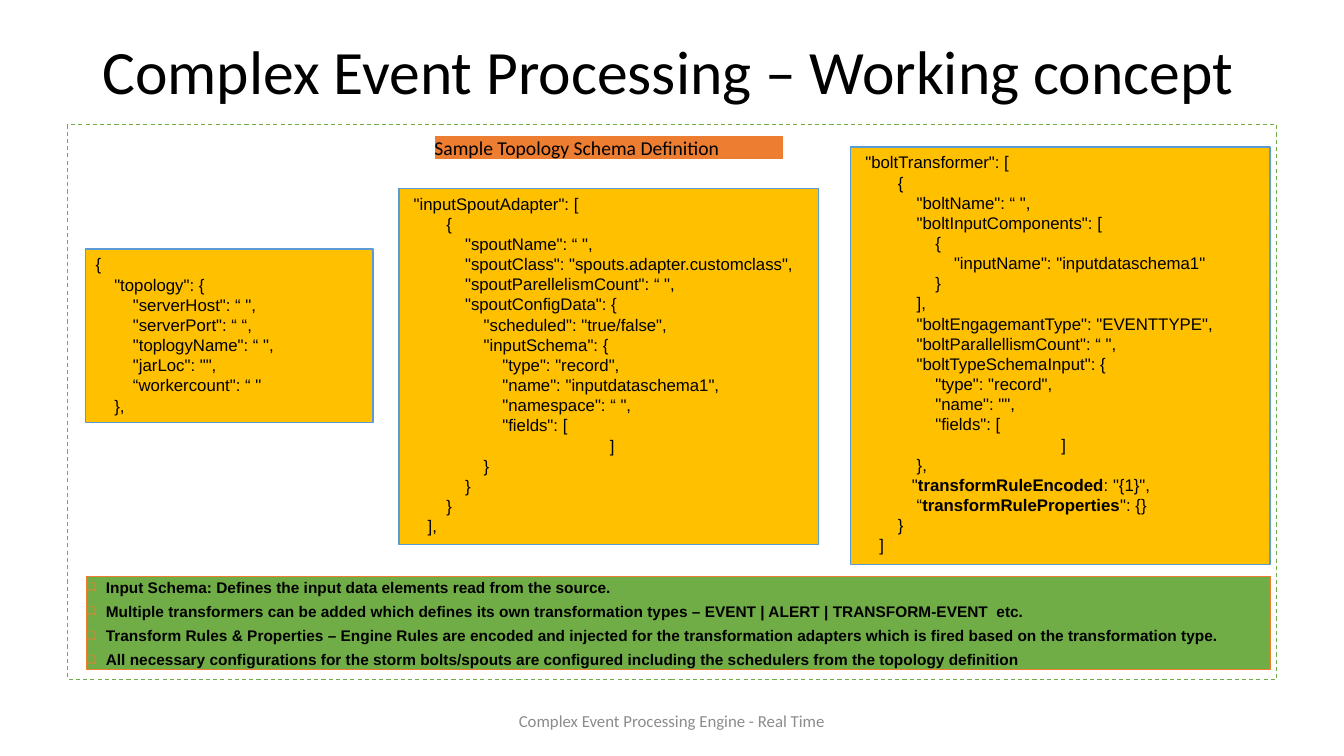
from dataclasses import dataclass

from lxml.etree import SubElement
from pptx import Presentation
from pptx.dml.color import RGBColor
from pptx.enum.dml import MSO_LINE_DASH_STYLE as Dash
from pptx.enum.shapes import MSO_SHAPE as Preset
from pptx.enum.text import MSO_ANCHOR as Anchor, MSO_AUTO_SIZE as AutoSize, PP_ALIGN as Align
from pptx.oxml.ns import qn
from pptx.util import Pt

BLACK, WHITE, GREY = "000000", "FFFFFF", "8C8C8C"
ORANGE, AMBER, BLUE, GREEN = "ED7D31", "FFC000", "5B9BD5", "70AD47"
SPACE_WIDTH = 3.335
BULLET_INDENT = 13.7


@dataclass(frozen=True)
class Box:
    left: float
    top: float
    width: float
    height: float


@dataclass(frozen=True)
class Schema:
    box: Box
    code: str


SCHEMAS = [
    Schema(Box(61.2, 178, 205.2, 124), """{
    "topology": {
        "serverHost": “ ",
        "serverPort": “ “,
        "toplogyName": “ ",
        "jarLoc": "",
        “workercount": “ "
    },"""),
    Schema(Box(285.1, 134.6, 299.5, 254.2), """ "inputSpoutAdapter": [
        {
            "spoutName": “ ",
            "spoutClass": "spouts.adapter.customclass",
            "spoutParellelismCount": “ ",
            "spoutConfigData": {
                "scheduled": "true/false",
                "inputSchema": {
                    "type": "record",
                    "name": "inputdataschema1",
                    "namespace": “ ",
                    "fields": [
                                           ]
                }
            }
        }
    ],"""),
    Schema(Box(607.7, 105.1, 299.5, 298.1), """ "boltTransformer": [
        {
            "boltName": “ ",
            "boltInputComponents": [
                {
                    "inputName": "inputdataschema1"
                }
            ],
            "boltEngagemantType": "EVENTTYPE",
            "boltParallellismCount": “ ",
            "boltTypeSchemaInput": {
                "type": "record",
                "name": "",
                "fields": [
                                           ]
            },
           "**transformRuleEncoded**: "{1}",
            “**transformRuleProperties**": {}
        }
    ]"""),
]

NOTES = [
    "Input Schema: Defines the input data elements read from the source.",
    "Multiple transformers can be added which defines its own transformation types – "
    "EVENT | ALERT | TRANSFORM-EVENT  etc.",
    "Transform Rules & Properties – Engine Rules are encoded and injected for the "
    "transformation adapters which is fired based on the transformation type.",
    "All necessary configurations for the storm bolts/spouts are configured including "
    "the schedulers from the topology definition",
]


def color(value: str) -> RGBColor:
    return RGBColor.from_string(value)


def place(shape, box: Box) -> None:
    shape.left, shape.top = Pt(box.left), Pt(box.top)
    shape.width, shape.height = Pt(box.width), Pt(box.height)


def paint(shape, fill: str | None, line: str, weight: float) -> None:
    if fill:
        shape.fill.solid()
        shape.fill.fore_color.rgb = color(fill)
    else:
        shape.fill.background()
    shape.line.color.rgb = color(line)
    shape.line.width = Pt(weight)


def add_box(slide, box: Box, fill: str | None, line: str, weight: float):
    shape = slide.shapes.add_shape(
        Preset.RECTANGLE, Pt(box.left), Pt(box.top), Pt(box.width), Pt(box.height))
    shape.shadow.inherit = False
    paint(shape, fill, line, weight)
    return shape


def prepare(shape, anchor: Anchor, tight: bool = False):
    frame = shape.text_frame
    frame.word_wrap = True
    frame.auto_size = AutoSize.NONE
    frame.vertical_anchor = anchor
    if tight:
        frame.margin_left = frame.margin_right = frame.margin_bottom = Pt(0)
        frame.margin_top = Pt(2.9)
    return frame


def add_run(paragraph, text: str, size: float, font: str,
            ink: str = BLACK, bold: bool = False) -> None:
    run = paragraph.add_run()
    run.text = text
    run.font.size, run.font.name, run.font.bold = Pt(size), font, bold
    run.font.color.rgb = color(ink)


def paragraphs(frame, count: int) -> list:
    return [frame.paragraphs[0], *(frame.add_paragraph() for _ in range(count - 1))]


def space(paragraph) -> None:
    paragraph.line_spacing = 0.85
    paragraph.space_before, paragraph.space_after = Pt(0), Pt(6)


def indent(paragraph, left: float, first: float = 0):
    properties = paragraph._p.get_or_add_pPr()
    properties.set("marL", str(Pt(left)))
    properties.set("indent", str(Pt(first)))
    return properties


def add_schema(slide, schema: Schema) -> None:
    frame = prepare(add_box(slide, schema.box, AMBER, BLUE, 1), Anchor.TOP)
    lines = schema.code.splitlines()
    for paragraph, line in zip(paragraphs(frame, len(lines)), lines):
        code = line.lstrip()
        paragraph.alignment = Align.LEFT
        indent(paragraph, (len(line) - len(code)) * SPACE_WIDTH)
        for index, part in enumerate(code.split("**")):
            add_run(paragraph, part, 12, "Arial", bold=index % 2 == 1)


def fill_notes(notes) -> None:
    place(notes, Box(61.9, 411.8, 845.3, 66.2))
    paint(notes, GREEN, ORANGE, 0.75)
    frame = prepare(notes, Anchor.TOP, tight=True)
    for paragraph, note in zip(paragraphs(frame, len(NOTES)), NOTES):
        space(paragraph)
        properties = indent(paragraph, BULLET_INDENT, -BULLET_INDENT)
        SubElement(SubElement(properties, qn("a:buClr")), qn("a:srgbClr"), val=ORANGE)
        SubElement(properties, qn("a:buSzPct"), val="70000")
        SubElement(properties, qn("a:buChar"), char="❑")
        add_run(paragraph, note, 11, "Arial", bold=True)


def main() -> None:
    deck = Presentation()
    deck.slide_width, deck.slide_height = Pt(960), Pt(540)
    slide = deck.slides.add_slide(deck.slide_layouts[1])

    title = slide.shapes.title
    place(title, Box(66, 0.7, 828, 104.4))
    heading = prepare(title, Anchor.MIDDLE).paragraphs[0]
    heading.alignment, heading.line_spacing = Align.LEFT, 0.9
    add_run(heading, "Complex Event Processing – Working concept", 44, "Calibri")

    fill_notes(slide.placeholders[1])

    footer = slide.shapes.add_textbox(Pt(318), Pt(500.4), Pt(324), Pt(28.8))
    caption = prepare(footer, Anchor.MIDDLE).paragraphs[0]
    caption.alignment = Align.CENTER
    add_run(caption, "Complex Event Processing Engine - Real Time", 12, "Calibri", GREY)

    label = add_box(slide, Box(310.3, 96.8, 249.1, 17.3), ORANGE, WHITE, 0.75)
    sample = prepare(label, Anchor.TOP, tight=True).paragraphs[0]
    sample.alignment = Align.LEFT
    space(sample)
    add_run(sample, "Sample Topology Schema Definition", 14, "Calibri")

    for schema in SCHEMAS:
        add_schema(slide, schema)

    border = add_box(slide, Box(48.2, 89.3, 864, 396), None, GREEN, 0.75)
    border.line.dash_style = Dash.DASH
    deck.save("out.pptx")


if __name__ == "__main__":
    main()
